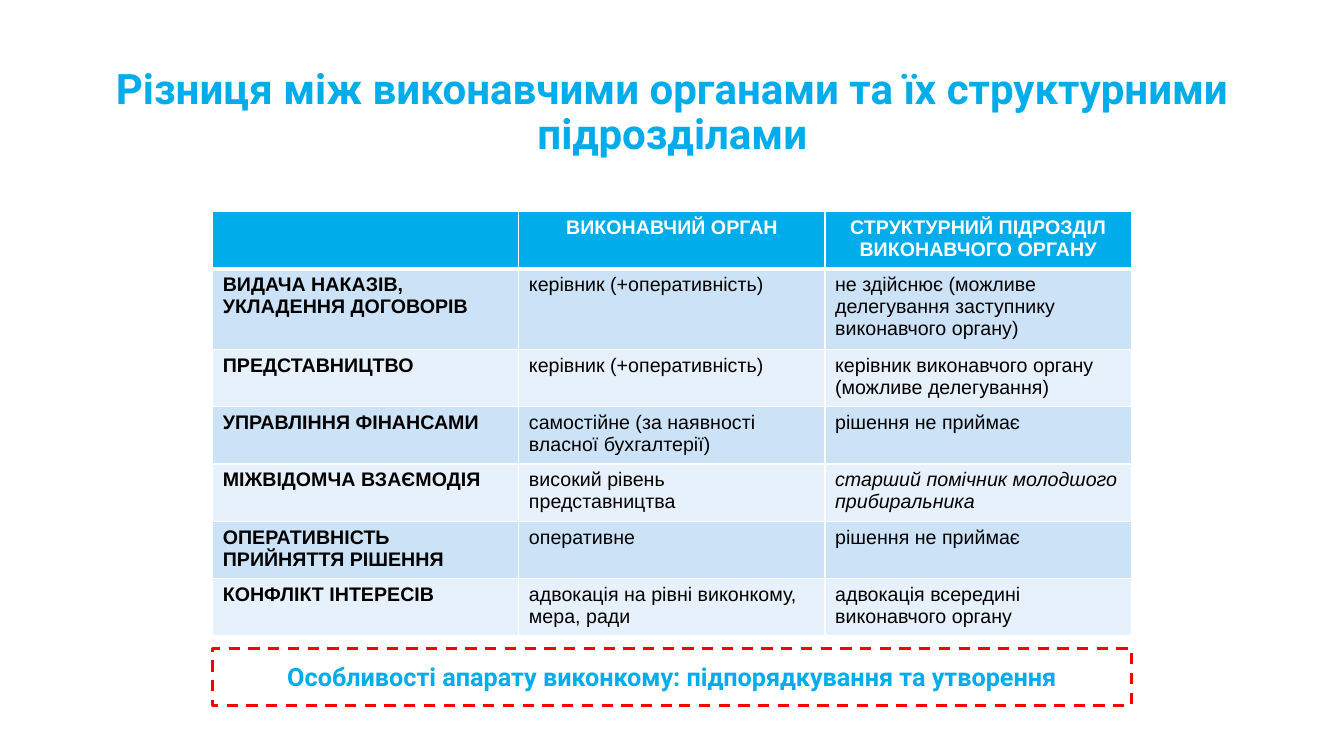
from dataclasses import dataclass

from lxml.etree import SubElement
from pptx import Presentation
from pptx.dml.color import RGBColor
from pptx.enum.dml import MSO_LINE_DASH_STYLE as Dash
from pptx.enum.shapes import MSO_SHAPE as Shape
from pptx.enum.text import MSO_ANCHOR as Anchor, PP_ALIGN as Align
from pptx.oxml.ns import qn
from pptx.util import Inches, Pt

BLUE, WHITE, BLACK, RED = "00ACE9", "FFFFFF", "000000", "FF0000"
BANDS = ("CCE3F7", "E7F1FB")
LEFT, WIDTH = 2.11, 9.11
ROW_HEIGHT = 0.49


@dataclass
class Style:
    size: float
    color: str
    font: str = "Arial"
    bold: bool = False
    italic: bool = False
    align: Align = Align.LEFT


@dataclass
class Comparison:
    topic: str
    executive: str
    subdivision: str
    italic: bool = False


HEADER = Comparison("", "ВИКОНАВЧИЙ ОРГАН", "СТРУКТУРНИЙ ПІДРОЗДІЛ ВИКОНАВЧОГО ОРГАНУ")
COMPARISONS = [
    Comparison("ВИДАЧА НАКАЗІВ, УКЛАДЕННЯ ДОГОВОРІВ", "керівник (+оперативність)",
               "не здійснює (можливе делегування заступнику виконавчого органу)"),
    Comparison("ПРЕДСТАВНИЦТВО", "керівник (+оперативність)",
               "керівник виконавчого органу (можливе делегування)"),
    Comparison("УПРАВЛІННЯ ФІНАНСАМИ", "самостійне (за наявності власної бухгалтерії)",
               "рішення не приймає"),
    Comparison("МІЖВІДОМЧА ВЗАЄМОДІЯ", "високий рівень представництва",
               "старший помічник молодшого прибиральника", italic=True),
    Comparison("ОПЕРАТИВНІСТЬ ПРИЙНЯТТЯ РІШЕННЯ", "оперативне", "рішення не приймає"),
    Comparison("КОНФЛІКТ ІНТЕРЕСІВ", "адвокація на рівні виконкому, мера, ради",
               "адвокація всередині виконавчого органу"),
]


def rgb(color: str) -> RGBColor:
    return RGBColor.from_string(color)


def write(frame, text: str, style: Style) -> None:
    frame.text = text
    frame.word_wrap = True
    paragraph = frame.paragraphs[0]
    paragraph.alignment = style.align
    font = paragraph.font
    if paragraph.runs:
        font = paragraph.runs[0].font
    font.name, font.size = style.font, Pt(style.size)
    font.bold, font.italic = style.bold, style.italic
    font.color.rgb = rgb(style.color)


def add_border(cell, side: str, width: float) -> None:
    line = SubElement(cell._tc.get_or_add_tcPr(), qn(f"a:ln{side}"), w=str(Pt(width)))
    fill = SubElement(line, qn("a:solidFill"))
    SubElement(fill, qn("a:srgbClr"), val=WHITE)


def fill_cell(cell, text: str, style: Style, fill: str, top: float, bottom: float) -> None:
    write(cell.text_frame, text, style)
    for side, width in (("L", 1), ("R", 1), ("T", top), ("B", bottom)):
        add_border(cell, side, width)
    cell.fill.solid()
    cell.fill.fore_color.rgb = rgb(fill)


def add_title(slide) -> None:
    title = slide.shapes.add_textbox(Inches(0.92), Inches(0.4), Inches(11.5), Inches(1.45))
    frame = title.text_frame
    frame.vertical_anchor = Anchor.MIDDLE
    write(frame, "Різниця між виконавчими органами та їх структурними підрозділами",
          Style(30, BLUE, "Roboto", bold=True, align=Align.CENTER))
    frame.paragraphs[0].line_spacing = 0.9


def add_comparison_table(slide) -> None:
    rows = [HEADER, *COMPARISONS]
    table = slide.shapes.add_table(len(rows), 3, Inches(LEFT), Inches(2.1), Inches(WIDTH),
                                   Inches(ROW_HEIGHT * len(rows))).table
    for index, row in enumerate(rows):
        table.rows[index].height = Inches(ROW_HEIGHT)
        is_header = index == 0
        fill = BLUE if is_header else BANDS[(index - 1) % 2]
        top = 3 if index == 1 else 1
        bottom = 3 if is_header else 1
        for column, text in enumerate((row.topic, row.executive, row.subdivision)):
            style = Style(14, WHITE if is_header else BLACK,
                          bold=is_header or column == 0,
                          italic=row.italic and column == 2,
                          align=Align.CENTER if is_header else Align.LEFT)
            fill_cell(table.cell(index, column), text, style, fill, top, bottom)


def add_remark(slide) -> None:
    remark = slide.shapes.add_shape(Shape.RECTANGLE, Inches(LEFT), Inches(6.43),
                                    Inches(WIDTH), Inches(0.57))
    remark.shadow.inherit = False
    remark.fill.background()
    remark.line.color.rgb = rgb(RED)
    remark.line.width = Pt(2)
    remark.line.dash_style = Dash.DASH
    remark.text_frame.vertical_anchor = Anchor.MIDDLE
    write(remark.text_frame, "Особливості апарату виконкому: підпорядкування та утворення",
          Style(18, BLUE, "Roboto", bold=True, align=Align.CENTER))


def main() -> None:
    deck = Presentation()
    deck.slide_width, deck.slide_height = Inches(13.33), Inches(7.5)
    slide = deck.slides.add_slide(deck.slide_layouts[6])
    # Heading, comparison and closing remark
    add_title(slide)
    add_comparison_table(slide)
    add_remark(slide)
    deck.save("out.pptx")


if __name__ == "__main__":
    main()
